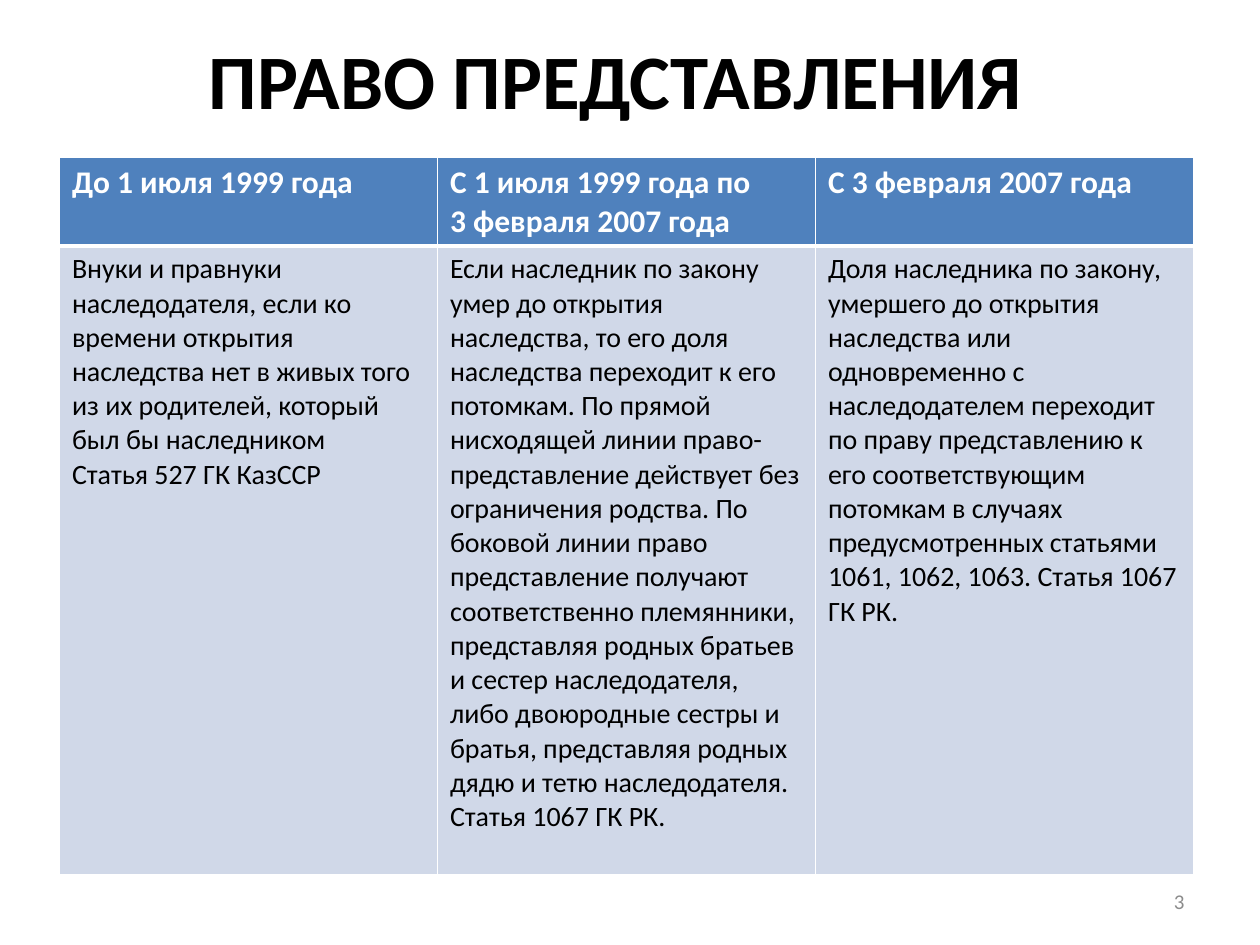
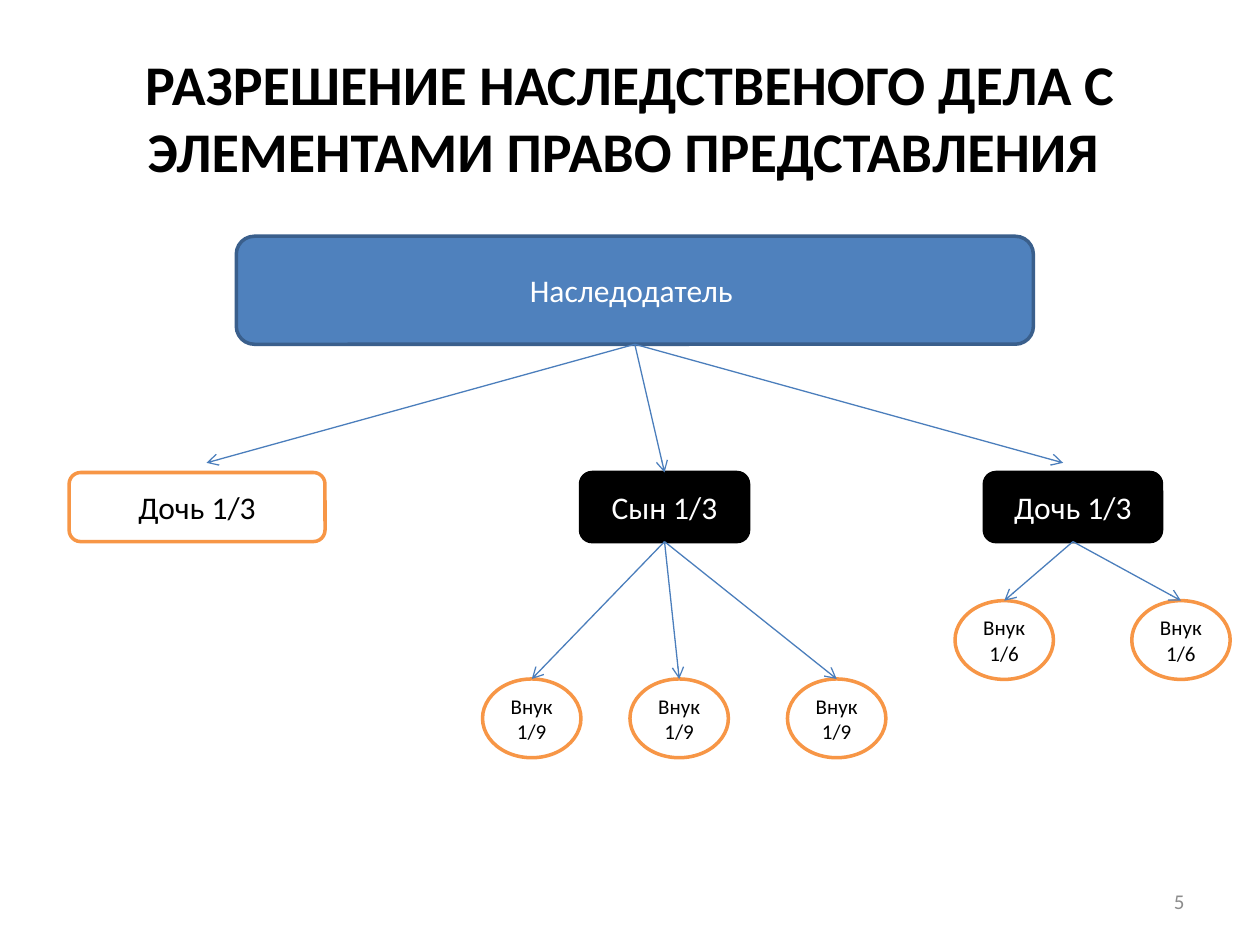
from lxml import etree
from pptx import Presentation
from pptx.dml.color import RGBColor
from pptx.enum.shapes import MSO_CONNECTOR, MSO_SHAPE as SHP
from pptx.enum.text import MSO_ANCHOR as ANC, MSO_AUTO_SIZE, PP_ALIGN as AL
from pptx.oxml.ns import qn
from pptx.util import Pt

FONT = "Calibri"
COLORS = {
    "black": "000000",
    "white": "FFFFFF",
    "blue": "4F81BD",
    "blue_edge": "3A5F8C",
    "arrow": "4B7EBC",
    "orange": "F79646",
    "pale": "D0D8E8",
    "gray": "8C8C8C",
}
ANCESTOR = ("blue", "blue_edge", "white")
LIVING = ("white", "orange", "black")
DECEASED = ("black", "black", "white")
TOP, BOTTOM = 0, 2

PERIODS = [
    ("До 1 июля 1999 года",
     "Внуки и правнуки наследодателя, если ко времени открытия наследства "
     "нет в живых того из их родителей, который был бы наследником\n"
     "Статья 527 ГК КазССР"),
    ("С 1 июля 1999 года по\n3 февраля 2007 года",
     "Если наследник по закону умер до открытия наследства, то его доля "
     "наследства переходит к его потомкам. По прямой нисходящей линии "
     "право-представление действует без ограничения родства. По боковой "
     "линии право представление получают соответственно племянники, "
     "представляя родных братьев и сестер наследодателя, либо двоюродные "
     "сестры и братья, представляя родных дядю и тетю наследодателя. "
     "Статья 1067 ГК РК."),
    ("С 3 февраля 2007 года",
     "Доля наследника по закону, умершего до открытия наследства или "
     "одновременно с наследодателем переходит по праву представлению к его "
     "соответствующим потомкам в случаях предусмотренных статьями 1061, "
     "1062, 1063. Статья 1067 ГК РК."),
]


def rgb(name):
    return RGBColor.from_string(COLORS[name])


def write(tf, text, size, color, align=AL.LEFT, bold=False):
    for i, line in enumerate(text.split("\n")):
        p = tf.paragraphs[0] if i == 0 else tf.add_paragraph()
        p.alignment = align
        r = p.add_run()
        r.text = line
        r.font.name = FONT
        r.font.size = Pt(size)
        r.font.bold = bold
        r.font.color.rgb = rgb(color)


def add_titled_slide(prs, title, left, top, size, number):
    s = prs.slides.add_slide(prs.slide_layouts[5])
    sp = s.shapes.title
    sp.left, sp.top, sp.width, sp.height = Pt(left), Pt(top), Pt(648), Pt(90)
    tf = sp.text_frame
    tf.auto_size = MSO_AUTO_SIZE.NONE
    tf.vertical_anchor = ANC.MIDDLE
    write(tf, title, size, "black", AL.CENTER, True)

    box = s.shapes.add_textbox(Pt(516), Pt(500.5), Pt(168), Pt(28.75))
    tf = box.text_frame
    tf.word_wrap = True
    tf.vertical_anchor = ANC.MIDDLE
    write(tf, str(number), 12, "gray", AL.RIGHT)
    return s


def set_borders(cell, bottom):
    tcPr = cell._tc.get_or_add_tcPr()
    for side, width in (("L", 1), ("R", 1), ("T", 1), ("B", bottom)):
        ln = etree.SubElement(tcPr, qn(f"a:ln{side}"), w=str(Pt(width)))
        fill = etree.SubElement(ln, qn("a:solidFill"))
        etree.SubElement(fill, qn("a:srgbClr"), val=COLORS["white"])


def fill_cell(cell, text, size, color, fill, bold, bottom):
    set_borders(cell, bottom)
    cell.fill.solid()
    cell.fill.fore_color.rgb = rgb(fill)
    write(cell.text_frame, text, size, color, bold=bold)


def add_period_table(s):
    table = s.shapes.add_table(2, len(PERIODS), Pt(34), Pt(90),
                               Pt(648), Pt(410)).table
    for row, height in zip(table.rows, (50.5, 359.5)):
        row.height = Pt(height)
    for col, (period, rule) in enumerate(PERIODS):
        table.columns[col].width = Pt(216)
        fill_cell(table.cell(0, col), period, 18, "white", "blue", True, 3)
        fill_cell(table.cell(1, col), rule, 16, "black", "pale", False, 1)


def add_person(s, kind, left, top, width, height, text, size, style):
    fill, edge, color = style
    sp = s.shapes.add_shape(kind, Pt(left), Pt(top), Pt(width), Pt(height))
    sp.shadow.inherit = False
    sp.fill.solid()
    sp.fill.fore_color.rgb = rgb(fill)
    sp.line.color.rgb = rgb(edge)
    sp.line.width = Pt(2)
    tf = sp.text_frame
    tf.word_wrap = True
    tf.vertical_anchor = ANC.MIDDLE
    tf.margin_left = tf.margin_right = 0
    write(tf, text, size, color, AL.CENTER)
    return sp


def add_child(s, left, width, text, style):
    return add_person(s, SHP.ROUNDED_RECTANGLE, left, 270, width, 39.5,
                      text, 18, style)


def add_arrow(s, parent, child=None, end=(0, 0)):
    x, y = end
    c = s.shapes.add_connector(MSO_CONNECTOR.STRAIGHT, 0, 0, Pt(x), Pt(y))
    c.begin_connect(parent, BOTTOM)
    if child is not None:
        c.end_connect(child, TOP)
    c.line.color.rgb = rgb("arrow")
    c.line.width = Pt(0.75)
    etree.SubElement(c.line._get_or_add_ln(), qn("a:tailEnd"), type="arrow")
    etree.SubElement(c._element.spPr, qn("a:effectLst"))


def add_grandchildren(s, parent, lefts, top, share):
    for left in lefts:
        grandchild = add_person(s, SHP.OVAL, left, top, 56.25, 45,
                                f"Внук\n{share}", 12, LIVING)
        add_arrow(s, parent, grandchild)


def add_family_tree(s):
    testator = add_person(s, SHP.ROUNDED_RECTANGLE, 135, 135, 455.5, 61.75,
                          "Наследодатель ", 18, ANCESTOR)
    add_child(s, 39.5, 146.25, "Дочь 1/3", LIVING)
    son = add_child(s, 331.75, 96, "Сын 1/3", DECEASED)
    daughter = add_child(s, 562.5, 101.25, "Дочь 1/3", DECEASED)

    for x in (118, 607.5):
        add_arrow(s, testator, end=(x, 264.5))
    add_arrow(s, testator, son)
    add_grandchildren(s, son, (275.75, 360, 450), 388, "1/9")
    add_grandchildren(s, daughter, (545.75, 646.75), 343.25, "1/6")


def main():
    prs = Presentation()
    prs.slide_width, prs.slide_height = Pt(720), Pt(540)
    s = add_titled_slide(prs, "ПРАВО ПРЕДСТАВЛЕНИЯ", 28, 0, 44, 3)
    add_period_table(s)
    s = add_titled_slide(
        prs, "РАЗРЕШЕНИЕ НАСЛЕДСТВЕНОГО ДЕЛА С ЭЛЕМЕНТАМИ ПРАВО ПРЕДСТАВЛЕНИЯ ",
        36, 21.5, 32, 5)
    add_family_tree(s)
    prs.save("out.pptx")


if __name__ == "__main__":
    main()
